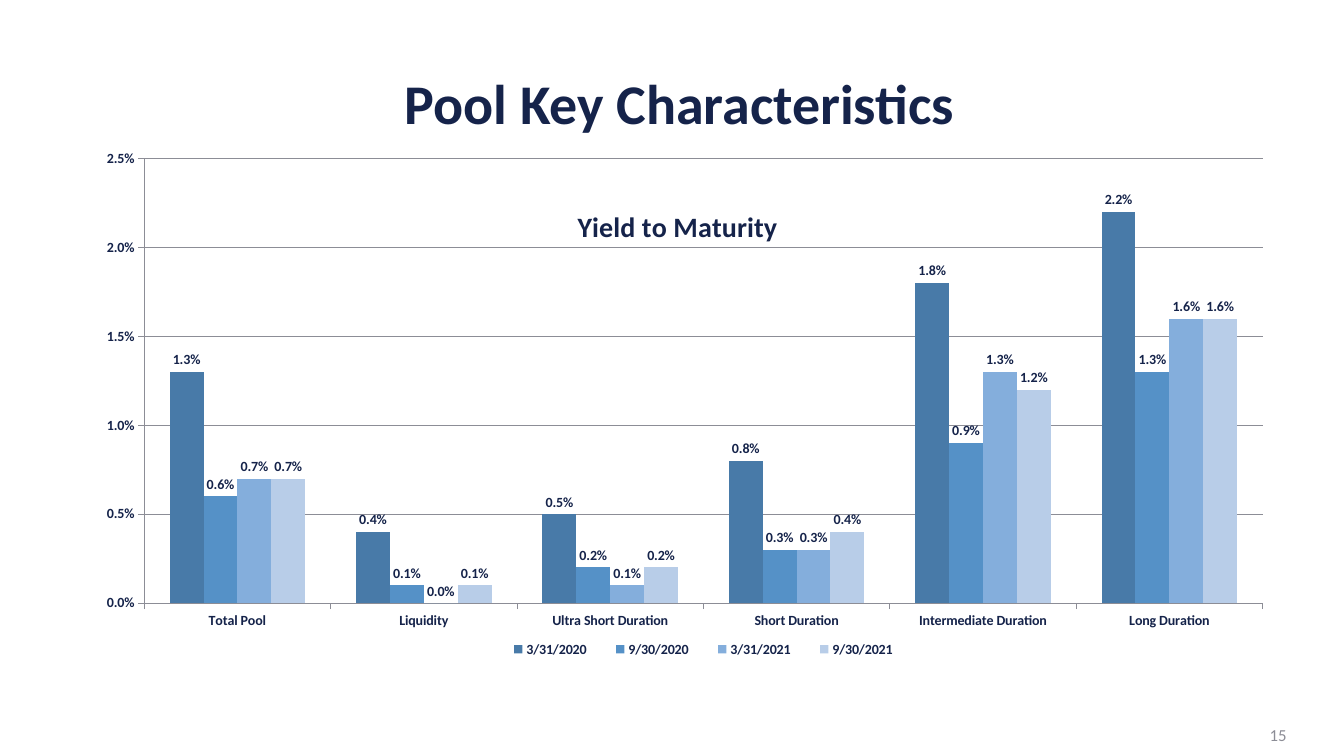
from dataclasses import dataclass

from lxml.etree import SubElement
from pptx import Presentation
from pptx.chart.axis import _BaseAxis
from pptx.chart.chart import Chart
from pptx.chart.data import CategoryChartData
from pptx.chart.series import BarSeries
from pptx.dml.color import RGBColor
from pptx.dml.line import LineFormat
from pptx.enum.chart import XL_CHART_TYPE, XL_LABEL_POSITION, XL_LEGEND_POSITION, XL_TICK_MARK
from pptx.enum.text import MSO_ANCHOR, PP_ALIGN
from pptx.oxml.ns import qn
from pptx.slide import Slide
from pptx.text.text import Font
from pptx.util import Inches, Pt


@dataclass(frozen=True)
class Theme:
    font: str = "Calibri"
    navy: str = "15234A"
    gray: str = "8C8D96"
    title_size: int = 40
    chart_title_size: int = 20
    number_size: int = 12
    chart_size: int = 10
    line_width: float = 0.5


@dataclass(frozen=True)
class TextItem:
    text: str
    box: tuple[float, float, float, float]
    size: int
    color: str
    alignment: PP_ALIGN
    bold: bool = False
    line_spacing: float = 1.0


@dataclass(frozen=True)
class YieldSeries:
    date: str
    color: str
    percents: tuple[float, ...]


THEME = Theme()
TEXTS = [
    TextItem("Pool Key Characteristics", (0.99, 0.69, 11.5, 0.73), THEME.title_size,
             THEME.navy, PP_ALIGN.CENTER, True, 0.9),
    TextItem("15", (9.86, 7.09, 3, 0.4), THEME.number_size, THEME.gray, PP_ALIGN.RIGHT),
]
CATEGORIES = ["Total Pool", "Liquidity", "Ultra Short Duration", "Short Duration",
              "Intermediate Duration", "Long Duration"]
YIELDS = [
    YieldSeries("3/31/2020", "487AA8", (1.3, 0.4, 0.5, 0.8, 1.8, 2.2)),
    YieldSeries("9/30/2020", "5591C7", (0.6, 0.1, 0.2, 0.3, 0.9, 1.3)),
    YieldSeries("3/31/2021", "84AEDC", (0.7, 0.0, 0.1, 0.3, 1.3, 1.6)),
    YieldSeries("9/30/2021", "B8CDE8", (0.7, 0.1, 0.2, 0.4, 1.2, 1.6)),
]
PERCENT_FORMAT = "0.0%"


def style_font(font: Font, size: int, color: str, bold: bool) -> None:
    font.name = THEME.font
    font.size = Pt(size)
    font.bold = bold
    font.color.rgb = RGBColor.from_string(color)


def add_text(slide: Slide, item: TextItem) -> None:
    shape = slide.shapes.add_textbox(*map(Inches, item.box))
    frame = shape.text_frame
    frame.word_wrap = True
    frame.vertical_anchor = MSO_ANCHOR.MIDDLE
    paragraph = frame.paragraphs[0]
    paragraph.text = item.text
    paragraph.alignment = item.alignment
    paragraph.line_spacing = item.line_spacing
    style_font(paragraph.font, item.size, item.color, item.bold)


def place_part(chart: Chart, name: str, index: int, inner: bool = False,
               **fractions: float) -> None:
    part = chart.element.xpath(f"c:chart/c:{name}")[0]
    for existing in part.findall(qn("c:layout")):
        part.remove(existing)
    layout = SubElement(part, qn("c:layout"))
    part.insert(index, layout)
    manual = SubElement(layout, qn("c:manualLayout"))
    if inner:
        SubElement(manual, qn("c:layoutTarget"), val="inner")
    for key in ("x", "y"):
        SubElement(manual, qn(f"c:{key}Mode"), val="edge")
    for key, fraction in fractions.items():
        SubElement(manual, qn(f"c:{key}"), val=str(fraction))


def style_line(line: LineFormat) -> None:
    line.color.rgb = RGBColor.from_string(THEME.gray)
    line.width = Pt(THEME.line_width)


def style_axis(axis: _BaseAxis) -> None:
    axis.major_tick_mark = XL_TICK_MARK.OUTSIDE
    axis.minor_tick_mark = XL_TICK_MARK.NONE
    style_font(axis.tick_labels.font, THEME.chart_size, THEME.navy, True)
    style_line(axis.format.line)


def style_series(series: BarSeries, color: str) -> None:
    series.format.fill.solid()
    series.format.fill.fore_color.rgb = RGBColor.from_string(color)
    series.invert_if_negative = False
    labels = series.data_labels
    labels.show_value = True
    labels.position = XL_LABEL_POSITION.OUTSIDE_END
    labels.number_format = PERCENT_FORMAT
    labels.number_format_is_linked = False
    style_font(labels.font, THEME.chart_size, THEME.navy, True)


def add_yield_chart(slide: Slide) -> None:
    data = CategoryChartData(number_format=PERCENT_FORMAT)
    data.categories = CATEGORIES
    for item in YIELDS:
        data.add_series(item.date, [round(percent / 100, 3) for percent in item.percents])
    box = map(Inches, (0.84, 1.25, 11.8, 5.38))
    chart = slide.shapes.add_chart(XL_CHART_TYPE.COLUMN_CLUSTERED, *box, data).chart
    style_font(chart.font, THEME.chart_size, THEME.navy, False)

    plot = chart.plots[0]
    plot.gap_width = 150
    plot.overlap = 0
    plot.vary_by_categories = False
    for series, item in zip(plot.series, YIELDS):
        style_series(series, item.color)

    value_axis = chart.value_axis
    value_axis.minimum_scale = 0
    value_axis.maximum_scale = 0.025
    value_axis.major_unit = 0.005
    value_axis.tick_labels.number_format = PERCENT_FORMAT
    value_axis.tick_labels.number_format_is_linked = False
    style_line(value_axis.major_gridlines.format.line)
    for axis in (chart.category_axis, value_axis):
        style_axis(axis)

    chart.has_title = True
    title = chart.chart_title.text_frame.paragraphs[0]
    title.text = "Yield to Maturity"
    style_font(title.font, THEME.chart_title_size, THEME.navy, True)

    chart.has_legend = True
    chart.legend.position = XL_LEGEND_POSITION.RIGHT
    chart.legend.include_in_layout = False
    style_font(chart.legend.font, THEME.chart_size, THEME.navy, True)

    place_part(chart, "plotArea", 0, True, x=0.05, y=0.06, w=0.94, h=0.82)
    place_part(chart, "title", 1, x=0.41, y=0.14)
    place_part(chart, "legend", 1, x=0.34, y=0.94, w=0.36, h=0.05)


def main() -> None:
    presentation = Presentation()
    presentation.slide_width = Inches(13.33)
    presentation.slide_height = Inches(7.5)
    slide = presentation.slides.add_slide(presentation.slide_layouts[6])
    for item in TEXTS:
        add_text(slide, item)
    add_yield_chart(slide)
    presentation.save("out.pptx")


if __name__ == "__main__":
    main()
